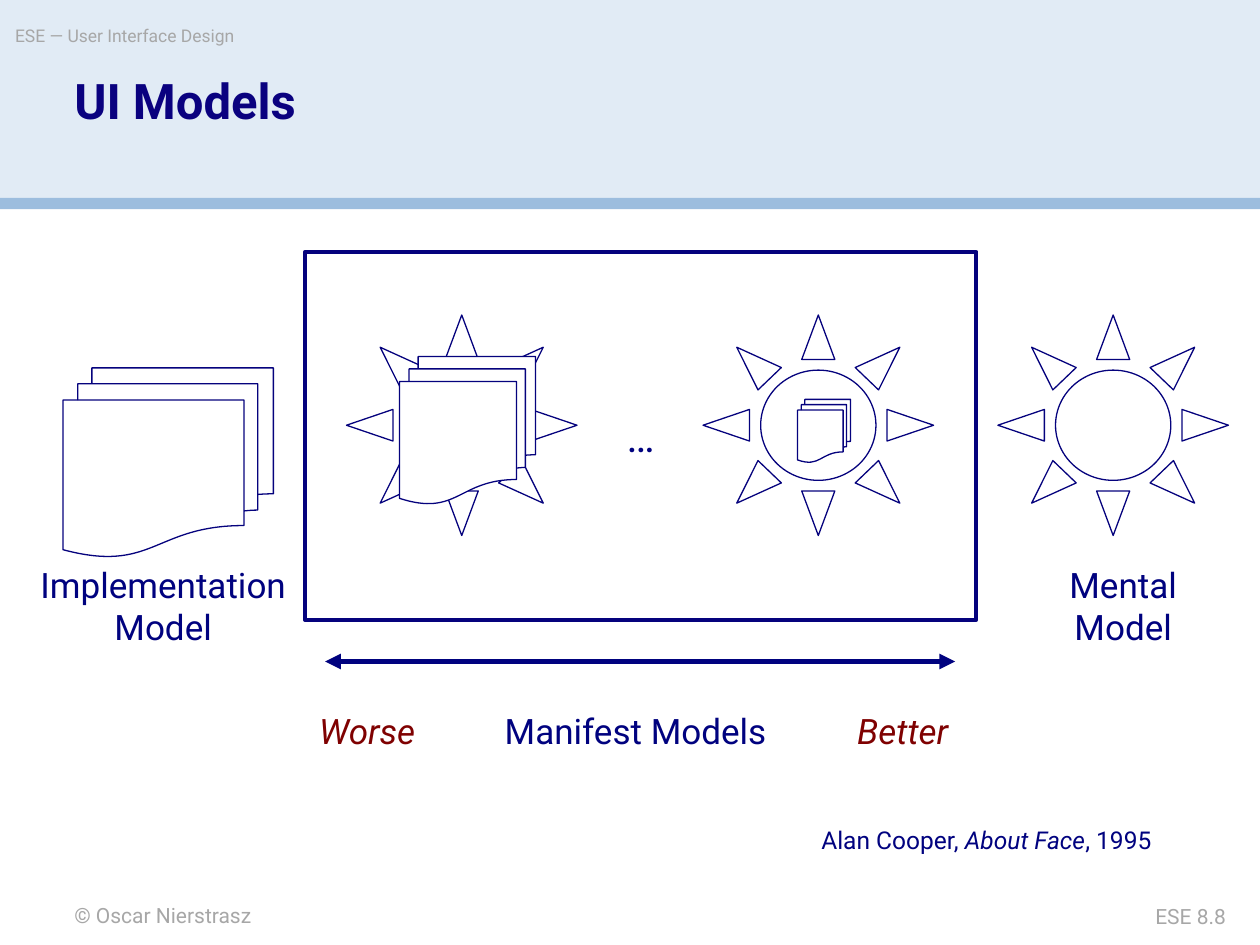
"""Build the UI Models slide."""
from dataclasses import dataclass

import lxml.etree
import pptx
import pptx.dml.color
import pptx.enum.shapes
import pptx.enum.text
import pptx.oxml.ns
import pptx.util

Inches = pptx.util.Inches
Pt = pptx.util.Pt
Shape = pptx.enum.shapes.MSO_SHAPE
Align = pptx.enum.text.PP_ALIGN
Anchor = pptx.enum.text.MSO_ANCHOR
Fit = pptx.enum.text.MSO_AUTO_SIZE
qn = pptx.oxml.ns.qn


@dataclass(frozen=True)
class Theme:
    font: str = "Roboto"
    band: str = "E1EBF5"
    rule: str = "9CBDDE"
    white: str = "FFFFFF"
    edge: str = "05027D"
    ink: str = "00027F"
    head: str = "0A017F"
    red: str = "7F0101"
    grey: str = "A7A7A7"
    title: int = 28
    dots: int = 24
    label: int = 20
    cite: int = 14
    foot: int = 12
    top: int = 10


def color(code):
    return pptx.dml.color.RGBColor.from_string(code)


def write(frame, *parts, font, size, ink, bold=False, slant=False, align=Align.LEFT):
    para = frame.paragraphs[0]
    para.alignment = align
    for part in parts:
        text, lean = part if isinstance(part, tuple) else (part, slant)
        run = para.add_run()
        run.text = text
        run.font.name = font
        run.font.size = Pt(size)
        run.font.bold = bold
        run.font.italic = lean
        run.font.color.rgb = color(ink)
    return para


class Deck:
    def __init__(self, theme):
        self.theme = theme
        self.file = pptx.Presentation()
        self.file.slide_width = Inches(10)
        self.file.slide_height = Inches(7.5)
        self.slide = self.file.slides.add_slide(self.file.slide_layouts[5])

    def strip(self, frame):
        frame.margin_left = frame.margin_right = 0
        frame.margin_top = frame.margin_bottom = 0

    def title(self, text, *box):
        shape = self.slide.shapes.title
        shape.left, shape.top, shape.width, shape.height = map(Inches, box)
        frame = shape.text_frame
        self.strip(frame)
        frame.auto_size = Fit.NONE
        frame.vertical_anchor = Anchor.TOP
        para = write(frame, text, font=self.theme.font, size=self.theme.title,
                     ink=self.theme.head, bold=True)
        para.line_spacing = 0.9

    def shape(self, kind, *box, fill=None, line=0.75, home=None):
        home = home or self.slide
        shape = home.shapes.add_shape(kind, *map(Inches, box))
        shape.shadow.inherit = False
        shape.fill.solid()
        shape.fill.fore_color.rgb = color(fill or self.theme.white)
        if line:
            shape.line.color.rgb = color(self.theme.edge)
            shape.line.width = Pt(line)
        else:
            shape.line.fill.background()
        return shape

    def sun(self, left, home=None):
        self.shape(Shape.SUN, left, 2.5, 1.83, 1.75, home=home)

    def pages(self, *box, home=None):
        self.shape(Shape.FLOWCHART_MULTIDOCUMENT, *box, home=home)

    def mixed(self, left, *box):
        group = self.slide.shapes.add_group_shape()
        self.sun(left, group)
        self.pages(*box, home=group)

    def text(self, box, *parts, flush=False, wrap=True, **style):
        frame = self.slide.shapes.add_textbox(*map(Inches, box)).text_frame
        frame.word_wrap = wrap
        if flush:
            self.strip(frame)
        else:
            frame.auto_size = Fit.SHAPE_TO_FIT_TEXT
        write(frame, *parts, font=self.theme.font, **style)

    def label(self, text, *box, ink=None, slant=False):
        self.text(box, text, size=self.theme.label, ink=ink or self.theme.ink,
                  slant=slant, align=Align.CENTER)

    def arrow(self, start, end, level):
        line = self.slide.shapes.add_connector(
            pptx.enum.shapes.MSO_CONNECTOR.STRAIGHT,
            *map(Inches, (start, level, end, level)))
        line.line.color.rgb = color(self.theme.ink)
        line.line.width = Pt(3)
        for tag in ("a:headEnd", "a:tailEnd"):
            lxml.etree.SubElement(line.line._get_or_add_ln(), qn(tag), type="triangle")
        lxml.etree.SubElement(line._element.spPr, qn("a:effectLst"))


def main():
    theme = Theme()
    deck = Deck(theme)
    deck.shape(Shape.RECTANGLE, 0, 0, 10, 1.58, fill=theme.band, line=0)
    deck.shape(Shape.RECTANGLE, 0, 1.57, 10, 0.09, fill=theme.rule, line=0)
    deck.text((0.59, 7.16, 4.17, 0.2), "© Oscar Nierstrasz", flush=True,
              size=theme.foot, ink=theme.grey)
    deck.text((0.12, 0.2, 5.9, 0.28), "ESE — User Interface Design", flush=True,
              wrap=False, size=theme.top, ink=theme.grey)
    deck.text((8.25, 7.17, 1.48, 0.2), "ESE 8.8", flush=True,
              size=theme.foot, ink=theme.grey, align=Align.RIGHT)

    panel = deck.shape(Shape.RECTANGLE, 2.42, 2, 5.33, 2.92, line=2.25)
    panel.text_frame.word_wrap = False
    panel.text_frame.vertical_anchor = Anchor.MIDDLE
    write(panel.text_frame, "…", font=theme.font, size=theme.dots,
          ink=theme.ink, align=Align.CENTER)

    title = deck.slide.shapes.title._element
    title.getparent().append(title)
    deck.title("UI Models", 0.59, 0.61, 8.83, 0.89)

    deck.pages(0.5, 2.92, 1.67, 1.5)
    deck.sun(7.92)
    deck.mixed(2.75, 3.17, 2.83, 1.08, 1.17)
    deck.mixed(5.58, 6.33, 3.17, 0.42, 0.5)
    deck.arrow(2.58, 7.58, 5.25)

    deck.label("Implementation Model", 0.17, 4.42, 2.25, 0.77)
    deck.label("Mental Model", 8.08, 4.42, 1.67, 0.77)
    deck.label("Manifest Models", 3.42, 5.58, 3.25, 0.43)
    for text, left in (("Better", 6.5), ("Worse", 2.25)):
        deck.label(text, left, 5.58, 1.33, 0.43, ink=theme.red, slant=True)
    deck.text((6.42, 6.5, 3.17, 0.33), "Alan Cooper, ", ("About Face", True),
              ", 1995", size=theme.cite, ink=theme.ink)
    deck.file.save("out.pptx")


if __name__ == "__main__":
    main()
